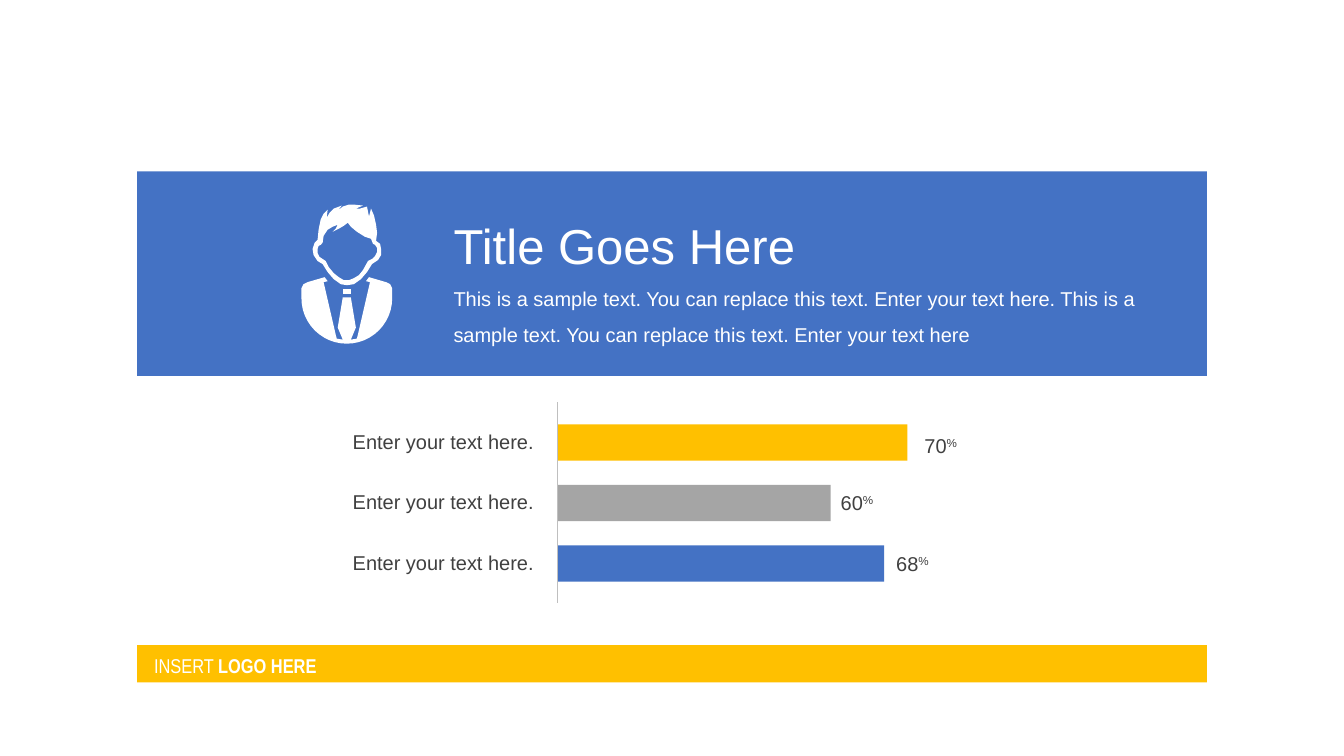
from math import cos, pi, sin

from lxml import etree
from pptx import Presentation
from pptx.dml.color import RGBColor
from pptx.enum.shapes import MSO_CONNECTOR, MSO_SHAPE
from pptx.enum.text import MSO_ANCHOR, MSO_AUTO_SIZE, PP_ALIGN
from pptx.oxml.ns import qn
from pptx.util import Inches, Pt

RECTANGLE = MSO_SHAPE.RECTANGLE
STRAIGHT = MSO_CONNECTOR.STRAIGHT
TOP, MIDDLE = MSO_ANCHOR.TOP, MSO_ANCHOR.MIDDLE
LEFT = PP_ALIGN.LEFT
NO_AUTOFIT = MSO_AUTO_SIZE.NONE

COLORS = {"blue": "4472C4", "gold": "FFC000", "gray": "A5A5A5",
          "axis": "BFBFBF", "text": "404040", "white": "FFFFFF"}
BODY_SIZE = 14.3
BANNER_LEFT, BANNER_WIDTH = 1.36, 10.61
TEXT_LEFT = 4.4
AXIS_X, FIRST_BAR_TOP, BAR_STEP, BAR_HEIGHT = 5.53, 4.21, 0.6, 0.36

# Bar width, colour, value, and left and top of the value label
BARS = [
    (3.47, "gold", "70", 9.07, 4.25),
    (2.71, "gray", "60", 8.24, 4.82),
    (3.24, "blue", "68", 8.79, 5.42),
]

ICON_CENTER, SUIT_RADIUS, SUIT_ARC_Y = 3.44, 0.45, 2.96
KNOT = [(3.4, 2.87), (3.48, 2.87), (3.48, 2.92), (3.4, 2.92)]
# Right half of the suit: tie, lapel, shoulder, as offsets from the centre
SUIT_EDGE = [(0.04, 2.95), (0.09, 3.25), (0.04, 3.37), (0.1, 3.36),
             (0.11, 3.32), (0.23, 2.8), (0.19, 2.79), (0.22, 2.75),
             (0.39, 2.8), (0.43, 2.82), (0.45, 2.86)]
FACE = [
    (3.45, 2.21), (3.41, 2.24), (3.36, 2.27), (3.3, 2.3), (3.33, 2.27),
    (3.35, 2.23), (3.3, 2.25), (3.25, 2.28), (3.21, 2.34), (3.2, 2.41),
    (3.18, 2.43), (3.16, 2.44), (3.15, 2.47), (3.15, 2.51), (3.17, 2.55),
    (3.2, 2.57), (3.23, 2.59), (3.26, 2.65), (3.31, 2.71), (3.36, 2.75),
    (3.41, 2.78), (3.46, 2.78), (3.51, 2.76), (3.56, 2.73), (3.6, 2.68),
    (3.65, 2.59), (3.69, 2.57), (3.72, 2.54), (3.74, 2.5), (3.74, 2.46),
    (3.72, 2.43), (3.7, 2.42), (3.68, 2.37), (3.62, 2.35), (3.54, 2.3),
    (3.48, 2.25)]
HAIR_AND_HEAD = [
    (3.51, 2.03), (3.6, 2.04), (3.53, 2.07), (3.57, 2.07), (3.64, 2.05),
    (3.66, 2.15), (3.68, 2.07), (3.71, 2.14), (3.73, 2.23), (3.74, 2.31),
    (3.73, 2.39), (3.77, 2.42), (3.78, 2.47), (3.78, 2.53), (3.75, 2.58),
    (3.69, 2.62), (3.64, 2.7), (3.58, 2.77), (3.51, 2.82), (3.44, 2.83),
    (3.38, 2.82), (3.31, 2.77), (3.25, 2.7), (3.2, 2.62), (3.15, 2.59),
    (3.11, 2.53), (3.1, 2.47), (3.12, 2.41), (3.15, 2.38), (3.16, 2.28),
    (3.18, 2.18), (3.21, 2.12), (3.25, 2.08), (3.24, 2.16), (3.27, 2.11),
    (3.31, 2.07), (3.39, 2.04), (3.35, 2.09), (3.4, 2.05), (3.46, 2.03)]


def color(name):
    return RGBColor.from_string(COLORS[name])


def suit_outline():
    """Mirror the right half of the suit, closed below by an arc."""
    angles = [step * pi / 24 for step in range(13)]
    arc = [(SUIT_RADIUS * cos(angle), SUIT_ARC_Y + SUIT_RADIUS * sin(angle))
           for angle in angles]
    half = SUIT_EDGE + arc
    mirrored = [(-x, y) for x, y in reversed(half)]
    return [(ICON_CENTER + x, y) for x, y in half + mirrored]


class SlideMaker:
    def __init__(self, page):
        self.page = page
        self.shapes = page.shapes

    def paint(self, shape, fill):
        shape.shadow.inherit = False
        shape.fill.solid()
        shape.fill.fore_color.rgb = color(fill)
        shape.line.fill.background()

    def bar(self, left, top, width, height, fill):
        box = self.shapes.add_shape(RECTANGLE, Inches(left), Inches(top),
                                    Inches(width), Inches(height))
        self.paint(box, fill)

    def axis(self, x, top, bottom):
        line = self.shapes.add_connector(STRAIGHT, Inches(x), Inches(top),
                                         Inches(x), Inches(bottom))
        line.line.color.rgb = color("axis")
        line.line.width = Pt(0.5)
        etree.SubElement(line._element.spPr, qn("a:effectLst"))

    def outline(self, *contours):
        """Draw closed contours as one white shape; inner ones are holes."""
        rings = [[(Inches(x), Inches(y)) for x, y in contour]
                 for contour in contours]
        builder = self.shapes.build_freeform(*rings[0][0])
        for number, ring in enumerate(rings):
            if number:
                builder.move_to(*ring[0])
            builder.add_line_segments(ring[1:], close=True)
        self.paint(builder.convert_to_shape(), "white")

    def fill_text(self, box, spans, ink, size=BODY_SIZE, font="Arial",
                  wrap=True, anchor=TOP, spacing=1.0):
        """Fill a box with spans of (text, font settings, baseline)."""
        frame = box.text_frame
        frame_format = {"word_wrap": wrap, "auto_size": NO_AUTOFIT,
                        "vertical_anchor": anchor}
        for name, value in frame_format.items():
            setattr(frame, name, value)
        para = frame.paragraphs[0]
        para.alignment = LEFT
        para.line_spacing = spacing
        for text, settings, baseline in spans:
            span = para.add_run()
            span.text = text
            font_format = {"name": font, "size": Pt(size), **settings}
            for name, value in font_format.items():
                setattr(span.font, name, value)
            span.font.color.rgb = color(ink)
            if baseline:
                span._r.get_or_add_rPr().set("baseline", str(baseline))

    def text(self, left, top, width, height, spans, ink, **style):
        box = self.shapes.add_textbox(Inches(left), Inches(top),
                                      Inches(width), Inches(height))
        self.fill_text(box, spans, ink, **style)

    def title(self, left, top, width, height, words):
        """Place the title in front of the shapes drawn so far."""
        box = self.shapes.title
        place = {"left": left, "top": top, "width": width, "height": height}
        for name, value in place.items():
            setattr(box, name, Inches(value))
        self.fill_text(box, [(words, {}, 0)], "white", size=35)
        box._element.getparent().append(box._element)


def main():
    deck = Presentation()
    deck.slide_width, deck.slide_height = Inches(13.33), Inches(7.5)
    maker = SlideMaker(deck.slides.add_slide(deck.slide_layouts[5]))

    maker.bar(BANNER_LEFT, 1.7, BANNER_WIDTH, 2.03, "blue")
    maker.title(TEXT_LEFT, 2.09, 4.53, 0.69, "Title Goes Here")
    maker.outline(KNOT)
    maker.outline(suit_outline())
    maker.outline(FACE, HAIR_AND_HEAD)
    summary = ("This is a sample text. You can replace this text. "
               "Enter your text here. This is a sample text. "
               "You can replace this text. Enter your text here")
    maker.text(TEXT_LEFT, 2.67, 6.97, 0.78, [(summary, {}, 0)], "white",
               spacing=1.5)

    for row, (width, fill, value, value_left, value_top) in enumerate(BARS):
        top = FIRST_BAR_TOP + row * BAR_STEP
        maker.bar(AXIS_X, top, width, BAR_HEIGHT, fill)
        maker.text(3.4, top, 2.03, 0.34, [("Enter your text here.", {}, 0)],
                   "text", wrap=False)
        maker.text(value_left, value_top, 0.55, 0.34,
                   [(value, {}, 0), ("%", {}, 30000)], "text", wrap=False)
    maker.axis(AXIS_X, 3.99, 5.98)

    maker.bar(BANNER_LEFT, 6.4, BANNER_WIDTH, 0.37, "gold")
    maker.text(1.43, 6.43, 2.61, 0.34,
               [("INSERT ", {}, 0), ("LOGO HERE", {"bold": True}, 0)],
               "white", font="Arial Narrow", anchor=MIDDLE)
    deck.save("out.pptx")


if __name__ == "__main__":
    main()
